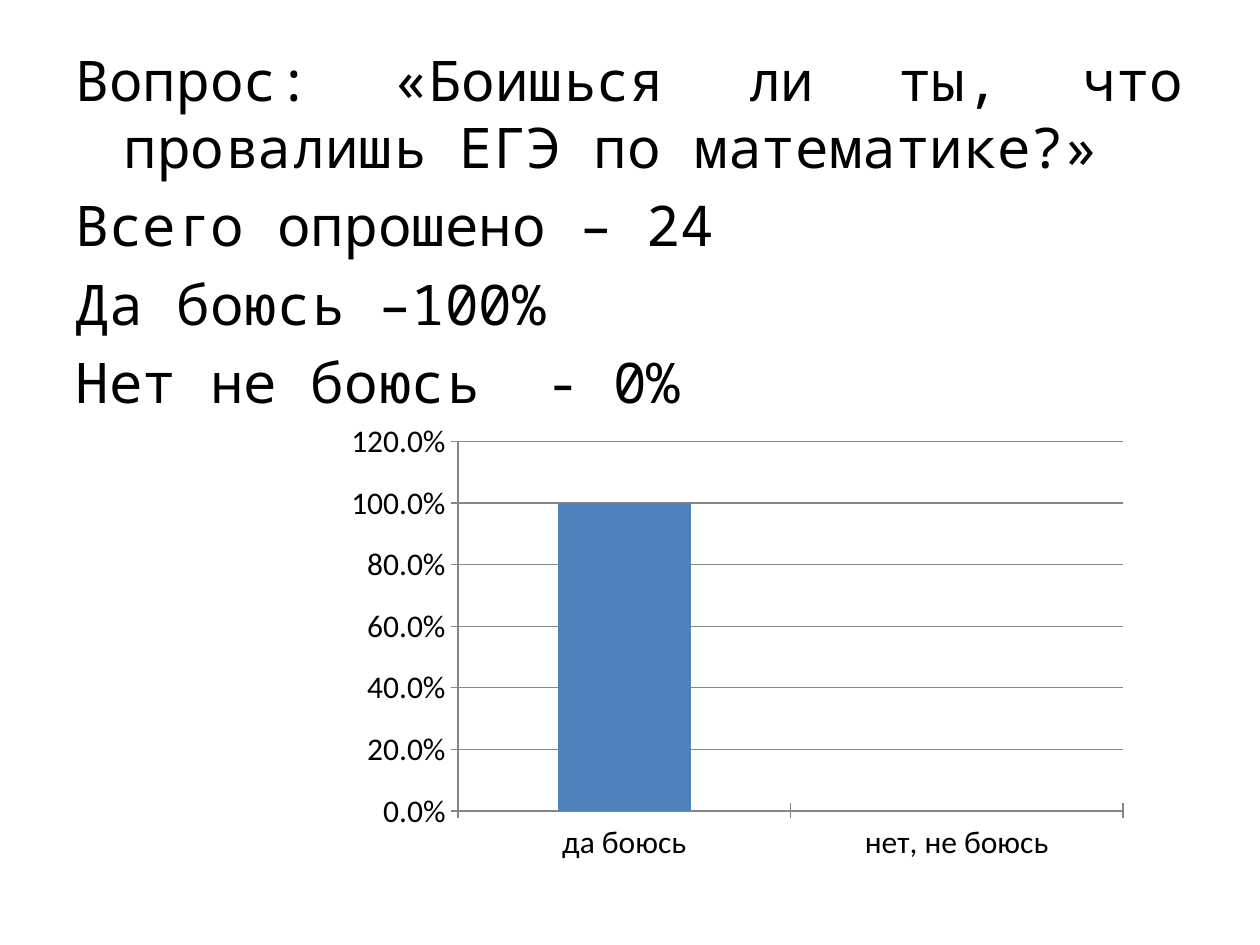
from lxml.etree import SubElement
from pptx import Presentation
from pptx.chart.data import CategoryChartData
from pptx.dml.color import RGBColor
from pptx.enum.chart import XL_CHART_TYPE as ChartType, XL_TICK_MARK as TickMark
from pptx.enum.text import MSO_AUTO_SIZE as AutoSize, PP_ALIGN as Align
from pptx.oxml.ns import qn
from pptx.util import Pt

PX = 9144
COLORS = {"text": "000000", "bar": "4F81BD", "axis": "868686"}
SURVEY_LINES = [
    "Вопрос: «Боишься ли ты, что провалишь ЕГЭ по математике?»",
    "Всего опрошено – 24",
    "Да боюсь –100%",
    "Нет не боюсь  - 0%",
]
ANSWERS = {"да боюсь": 1, "нет, не боюсь": 0}


def color(name):
    """Return the named colour as RGB."""
    return RGBColor.from_string(COLORS[name])


def apply_format(target, **values):
    """Set each given attribute on the target."""
    for name, value in values.items():
        setattr(target, name, value)


def scale_box(box):
    """Turn a box in px into EMU."""
    return [length * PX for length in box]


def fill_survey(placeholder, box):
    """Place the body placeholder and write the survey lines in it."""
    apply_format(placeholder, **dict(zip(("left", "top", "width", "height"), scale_box(box))))
    frame = placeholder.text_frame
    apply_format(frame, text="\n".join(SURVEY_LINES), word_wrap=True, auto_size=AutoSize.NONE)
    for paragraph in frame.paragraphs:
        paragraph.alignment = Align.JUSTIFY
        properties = paragraph._p.get_or_add_pPr()
        properties.set("marL", str(38 * PX))
        properties.set("indent", str(-38 * PX))
        SubElement(properties, qn("a:buNone"))
        font = paragraph.runs[0].font
        apply_format(font, name="Noto Sans Mono", size=Pt(32))
        font.color.rgb = color("text")


def add_answer_chart(slide, box):
    """Add the column chart with the share of each answer."""
    data = CategoryChartData(number_format="0.0%")
    data.categories = list(ANSWERS)
    data.add_series("Series 1", list(ANSWERS.values()))
    chart = slide.shapes.add_chart(ChartType.COLUMN_CLUSTERED, *scale_box(box), data).chart
    apply_format(chart, has_legend=False, has_title=False)
    apply_format(chart.font, name="Calibri", size=Pt(18))
    chart.font.color.rgb = color("text")

    plot = chart.plots[0]
    apply_format(plot, vary_by_categories=False, gap_width=150)
    series_fill = plot.series[0].format.fill
    series_fill.solid()
    series_fill.fore_color.rgb = color("bar")

    value_axis = chart.value_axis
    apply_format(value_axis, minimum_scale=0, maximum_scale=1.2, major_unit=0.2,
                 has_major_gridlines=True)
    apply_format(value_axis.tick_labels, number_format="0.0%", number_format_is_linked=False)
    for axis in (chart.category_axis, value_axis):
        apply_format(axis, major_tick_mark=TickMark.CROSS, minor_tick_mark=TickMark.NONE)
    for part in (chart.category_axis, value_axis, value_axis.major_gridlines):
        part.format.line.color.rgb = color("axis")
        part.format.line.width = Pt(0.75)


def main():
    """Build the survey slide and save it."""
    presentation = Presentation()
    apply_format(presentation, slide_width=1000 * PX, slide_height=750 * PX)
    slide = presentation.slides.add_slide(presentation.slide_layouts[1])
    title = slide.shapes.title.element
    title.getparent().remove(title)
    fill_survey(slide.placeholders[1], (50, 31, 900, 639))
    add_answer_chart(slide, (266, 328, 638, 363))
    presentation.save("out.pptx")


if __name__ == "__main__":
    main()
